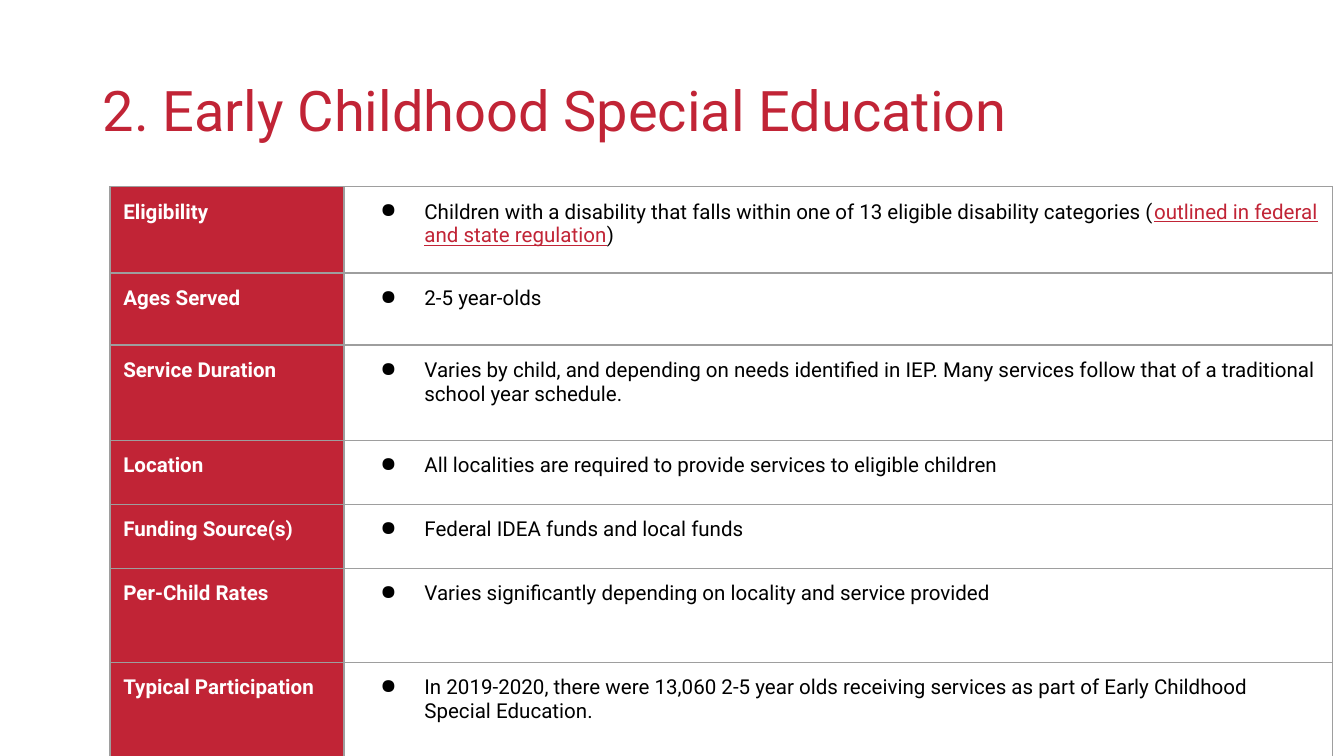
"""Build the Early Childhood Special Education programme slide."""
from lxml import etree
from pptx import Presentation
from pptx.dml.color import RGBColor
from pptx.enum import text as t
from pptx.oxml import ns
from pptx.util import Cm, Pt

RED = RGBColor(0xC1, 0x24, 0x36)
WHITE = RGBColor(0xFF, 0xFF, 0xFF)
BLACK = RGBColor(0, 0, 0)
GREY = RGBColor(0x9E, 0x9E, 0x9E)
FONT = "Roboto"

COLUMN_WIDTHS = (4.42, 18.69)
PROGRAM_FACTS = [
    ("Eligibility", 1.63, [
        ("Children with a disability that falls within one of 13 eligible disability categories (", {}),
        ("outlined in federal and state regulation", {"color": RED, "underline": True}),
        (")", {}),
    ]),
    ("Ages Served", 1.36, [("2-5 year-olds", {})]),
    ("Service Duration", 1.8, [
        ("Varies by child, and depending on needs identified in IEP. "
         "Many services follow that of a traditional school year schedule.", {}),
    ]),
    ("Location", 1.21, [
        ("All localities are required to provide services to eligible children", {}),
    ]),
    ("Funding Source(s)", 1.21, [("Federal IDEA funds and local funds", {})]),
    ("Per-Child Rates", 1.78, [
        ("Varies significantly depending on locality and service provided", {}),
    ]),
    ("Typical Participation", 1.78, [
        ("In 2019-2020, there were 13,060 2-5 year olds receiving services "
         "as part of Early Childhood Special Education.", {}),
    ]),
]


def add_run(paragraph, content, size=11, color=BLACK, bold=False, underline=False):
    run = paragraph.add_run()
    run.text = content
    font = run.font
    font.name = FONT
    font.size = Pt(size)
    font.bold = bold
    font.underline = underline
    font.color.rgb = color


def add_child(parent, tag, **attributes):
    child = etree.SubElement(parent, ns.qn(tag))
    for name, value in attributes.items():
        child.set(name, str(value))
    return child


def add_bullet(paragraph):
    properties = paragraph._p.get_or_add_pPr()
    properties.set("marL", str(Cm(1.27)))
    properties.set("indent", str(Cm(-0.83)))
    color = add_child(properties, "a:buClr")
    add_child(color, "a:srgbClr", val=BLACK)
    add_child(properties, "a:buChar", char="●")


def format_cell(cell, fill):
    properties = cell._tc.get_or_add_tcPr()
    for side in ("L", "R", "T", "B"):
        line = add_child(properties, f"a:ln{side}", w=Pt(0.75))
        solid = add_child(line, "a:solidFill")
        add_child(solid, "a:srgbClr", val=GREY)
    cell.fill.solid()
    cell.fill.fore_color.rgb = fill
    cell.margin_left = cell.margin_right = Cm(0.25)
    cell.margin_top = cell.margin_bottom = Cm(0.25)


def add_title(slide, content):
    shape = slide.shapes.add_textbox(Cm(1.75), Cm(0.76), Cm(21.89), Cm(2.77))
    frame = shape.text_frame
    frame.word_wrap = True
    frame.vertical_anchor = t.MSO_ANCHOR.MIDDLE
    frame.margin_left = frame.margin_right = Cm(0.19)
    frame.margin_top = frame.margin_bottom = Cm(0.1)
    paragraph = frame.paragraphs[0]
    paragraph.line_spacing = 0.9
    add_run(paragraph, content, size=30, color=RED)


def add_facts_table(slide):
    height = sum(row_height for _, row_height, _ in PROGRAM_FACTS)
    shape = slide.shapes.add_table(
        len(PROGRAM_FACTS), len(COLUMN_WIDTHS),
        Cm(2.08), Cm(3.53), Cm(sum(COLUMN_WIDTHS)), Cm(height))
    table = shape.table
    table.first_row = table.horz_banding = False
    for column, width in zip(table.columns, COLUMN_WIDTHS):
        column.width = Cm(width)
    for row, (label, row_height, details) in zip(table.rows, PROGRAM_FACTS):
        row.height = Cm(row_height)
        label_cell, detail_cell = row.cells
        format_cell(label_cell, RED)
        add_run(label_cell.text_frame.paragraphs[0], label, color=WHITE, bold=True)
        format_cell(detail_cell, WHITE)
        paragraph = detail_cell.text_frame.paragraphs[0]
        add_bullet(paragraph)
        for content, style in details:
            add_run(paragraph, content, **style)


def main():
    presentation = Presentation()
    presentation.slide_width = Cm(25.4)
    presentation.slide_height = Cm(14.29)
    slide = presentation.slides.add_slide(presentation.slide_layouts[6])
    add_title(slide, "2. Early Childhood Special Education")
    add_facts_table(slide)
    presentation.save("out.pptx")


if __name__ == "__main__":
    main()
